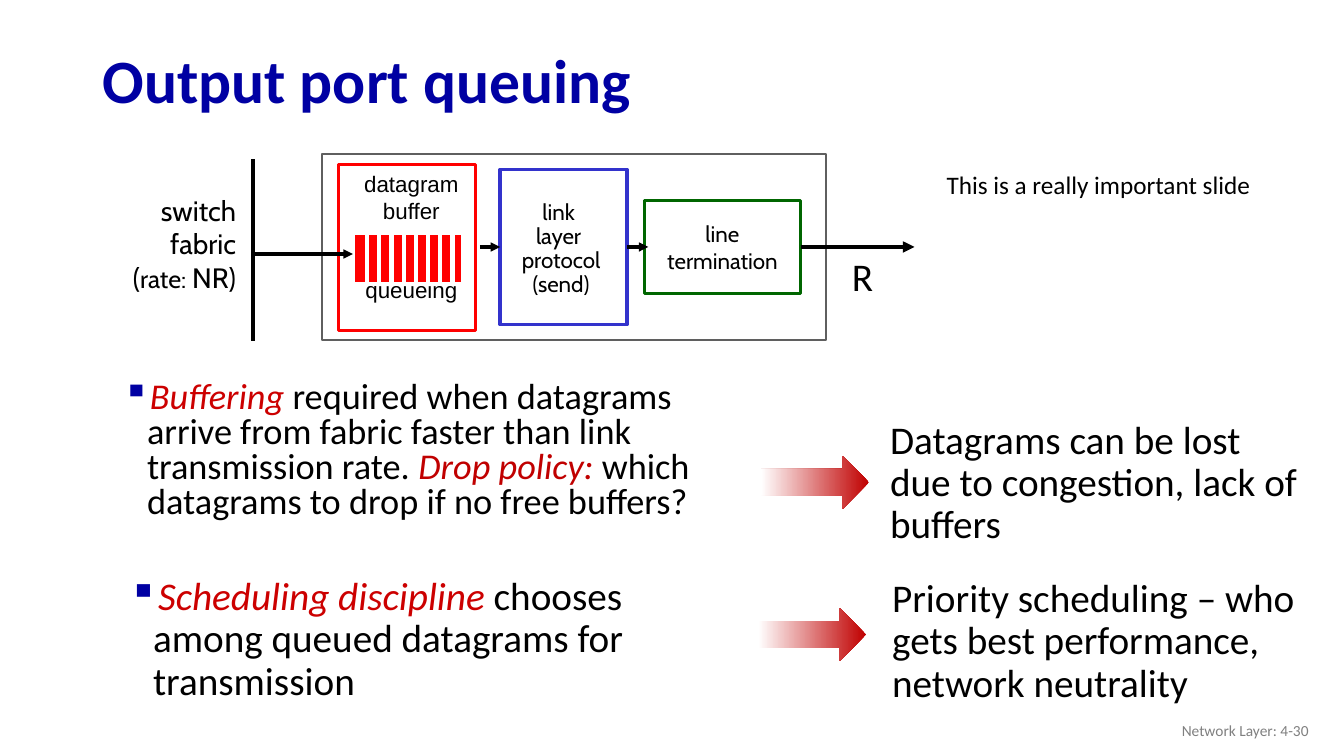
from lxml import etree
from pptx import Presentation
from pptx.dml.color import RGBColor
from pptx.enum.shapes import MSO_CONNECTOR, MSO_SHAPE
from pptx.enum.text import MSO_ANCHOR, PP_ALIGN
from pptx.oxml.ns import qn
from pptx.util import Inches, Pt

RECT, ARROW = MSO_SHAPE.RECTANGLE, MSO_SHAPE.RIGHT_ARROW
LINE = MSO_CONNECTOR.STRAIGHT
LEFT, MID, RIGHT = PP_ALIGN.LEFT, PP_ALIGN.CENTER, PP_ALIGN.RIGHT

HEX = {"navy": "0000A3", "red": "CC0000", "dark": "C00000", "black": "000000",
       "white": "FFFFFF", "gray": "808080", "frame": "5F5F5F",
       "green": "006600", "blue": "3333CC", "hot": "FF0000"}

# Content: a paragraph is a list of (text, style) runs
TITLE = "Output port queuing"
NOTE = "This is a really important slide"
FOOT = "Network Layer: 4-30"
RATE = "R"
SWITCH = ["switch", "fabric", [("(", {}), ("rate: ", {"size": 18}), ("NR)", {})]]
QUEUE = ["datagram", "buffer", "queueing"]
LINK = ["link ", "layer ", "protocol", "(send)"]
TERM = ["line", "termination"]
RED = {"color": "red", "italic": True}
DROP = {"color": "dark", "italic": True}

# Each point: box, size, line spacing, runs
POINTS = [
    ((97, 374, 654, 155), 25.9, 0.8,
     [("Buffering", RED),
      (" required when datagrams arrive from fabric faster than link "
       "transmission rate. ", {}),
      ("Drop policy: ", DROP),
      ("which datagrams to drop if no free buffers?", {})]),
    ((103, 567, 561, 141), 28, 0.9,
     [("Scheduling discipline", RED),
      (" chooses among queued datagrams for transmission", {})]),
]
# Each effect: text box, arrow corner, text
EFFECTS = [
    ((873, 412, 432, 137), (755, 452),
     "Datagrams can be lost due to congestion, lack of buffers"),
    ((875, 569, 458, 137), (752, 603),
     "Priority scheduling – who gets best performance, network neutrality"),
]

# Grid: 1333 columns by 750 rows
COLS, ROWS = 1333, 750
AXIS = 245
CELLS = 9
BUFFER = (350, 231, 109, 51)

prs = Presentation()
prs.slide_width, prs.slide_height = Inches(13.33), Inches(7.5)
slide = prs.slides.add_slide(prs.slide_layouts[6])
shapes = slide.shapes


def grid(vals):
    steps = (prs.slide_width / COLS, prs.slide_height / ROWS)
    return [round(v * steps[i % 2]) for i, v in enumerate(vals)]


def rgb(name):
    return RGBColor.from_string(HEX[name])


def block(box, edge=None, width=2.25, fill="white", kind=RECT):
    shape = shapes.add_shape(kind, *grid(box))
    shape.shadow.inherit = False
    shape.fill.solid()
    shape.fill.fore_color.rgb = rgb(fill)
    if edge:
        shape.line.color.rgb = rgb(edge)
        shape.line.width = Pt(width)
    else:
        shape.line.fill.background()
    return shape


def write(shape, paras, size, font="Calibri", color="black", align=LEFT,
          space=None, wrap=True, middle=False, bold=False):
    frame = shape.text_frame
    frame.word_wrap = wrap
    frame.vertical_anchor = MSO_ANCHOR.MIDDLE if middle else MSO_ANCHOR.TOP
    for i, runs in enumerate(paras):
        para = frame.paragraphs[0] if i == 0 else frame.add_paragraph()
        para.alignment = align
        para.line_spacing = space
        for text, style in [(runs, {})] if isinstance(runs, str) else runs:
            run = para.add_run()
            run.text = text
            run.font.name = font
            run.font.size = Pt(style.get("size", size))
            run.font.color.rgb = rgb(style.get("color", color))
            run.font.italic = style.get("italic", False)
            run.font.bold = bold
    return frame.paragraphs


def label(box, paras, size, **look):
    return write(shapes.add_textbox(*grid(box)), paras, size, **look)


def bullet(para):
    props = para._p.get_or_add_pPr()
    props.set("marL", str(Inches(0.39)))
    props.set("indent", str(-Inches(0.24)))
    tint = etree.SubElement(props, qn("a:buClr"))
    etree.SubElement(tint, qn("a:srgbClr"), val=HEX["navy"])
    etree.SubElement(props, qn("a:buChar"), char="▪")


def wire(start, end, color="black", width=2.25, head=True):
    link = shapes.add_connector(LINE, *grid(start + end))
    link.line.color.rgb = rgb(color)
    link.line.width = Pt(width)
    if head:
        etree.SubElement(link.line._get_or_add_ln(), qn("a:tailEnd"),
                         type="triangle")
    etree.SubElement(link._element.spPr, qn("a:effectLst"))
    return link


# Title and bullet points
label((92, 34, 1150, 98), [TITLE], 44, color="navy", space=0.9,
      middle=True, bold=True)
for box, size, space, runs in POINTS:
    para = label(box, [runs], size, space=space)[0]
    para.space_before = Pt(10)
    bullet(para)

# Effects with fading arrows
for box, corner, text in EFFECTS:
    write(block(box), [text], 28, space=0.9)
    fade = block(corner + (107, 53), kind=ARROW).fill
    fade.gradient()
    fade.gradient_angle = 180
    for stop, name in zip(fade.gradient_stops, ("dark", "white")):
        stop.color.rgb = rgb(name)

label((929, 163, 325, 40), [NOTE], 18, wrap=False)

# Output port: frame, line termination, link layer
block((319, 153, 500, 184), "frame", 1.5)
term = block((639, 199, 155, 92), "green")
write(term, TERM, 16, font="Cabin", align=MID, wrap=False, middle=True)
send = block((496, 168, 126, 154), "blue")
wire((476, AXIS), (496, AXIS)).end_connect(send, 1)
wire((622, AXIS), (643, AXIS)).begin_connect(send, 3)
write(block((499, 202, 115, 91)), LINK, 16, font="Cabin", align=MID,
      space=0.9, wrap=False, middle=True)
write(block((129, 196, 115, 91)), SWITCH, 20, font="Cabin", align=RIGHT,
      wrap=False, middle=True)

# Datagram buffer, split into equal cells
block((336, 163, 136, 165), "hot")
paras = label((345, 164, 126, 160), QUEUE, 16, font="Arial", align=MID,
              wrap=False)
paras[-1].space_before = Pt(37)
block(BUFFER, "white", 3, fill="hot")
left, top, wide, high = BUFFER
for i in range(1, CELLS):
    x = left + 2 + i * wide / CELLS
    wire((x, top + 1), (x, top + high - 1), "white", 3, head=False)

# Switch fabric feed and outgoing line
wire((251, 158), (251, 338), head=False)
wire((249, 252), (350, 252))
wire((794, AXIS), (907, AXIS), width=2.75).begin_connect(term, 3)
label((835, 245, 35, 57), [RATE], 28)

label((1008, 705, 300, 40), [FOOT], 11, color="gray", align=RIGHT, middle=True)

prs.save("out.pptx")
